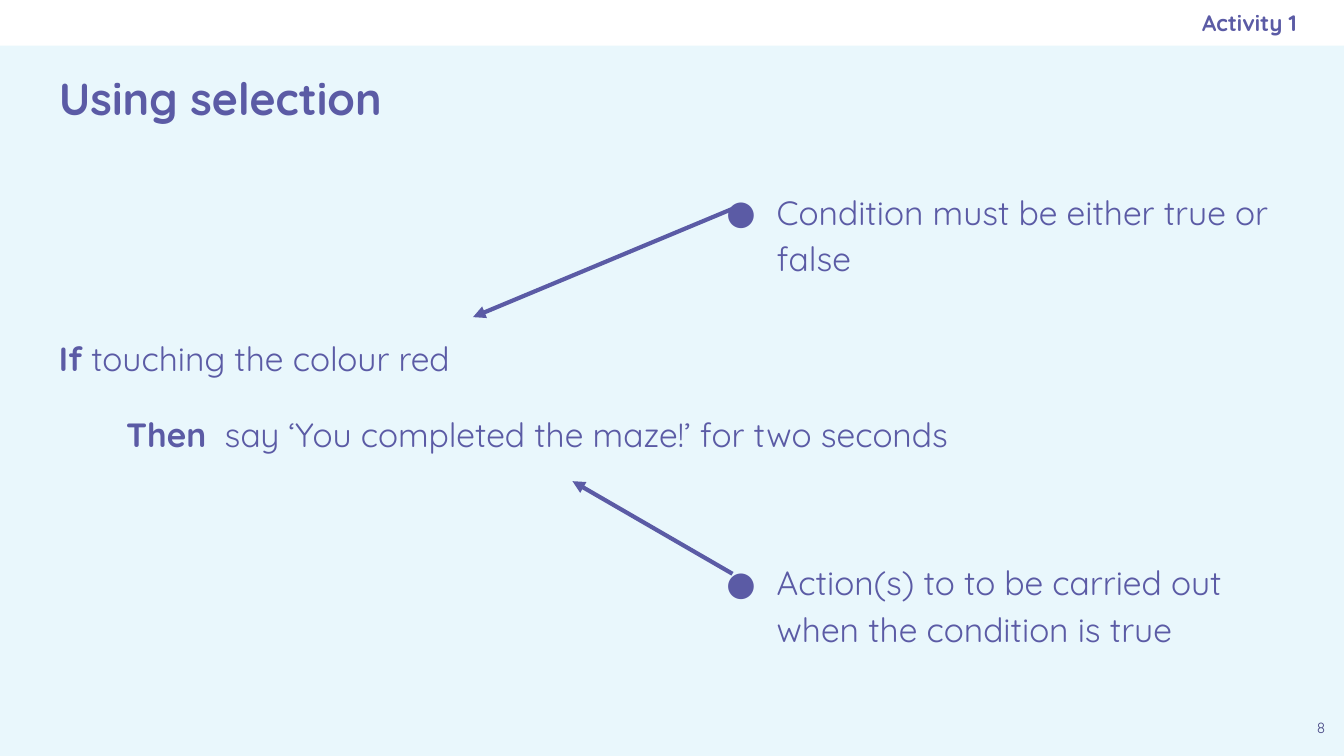
from lxml import etree
from pptx import Presentation
from pptx import util as u
from pptx.dml.color import RGBColor
from pptx.enum import shapes, text
from pptx.oxml.ns import qn

COLOURS = {"background": "E9F7FC", "band": "FFFFFF", "main": "5B5BA5", "number": "494985"}
FONT = "Quicksand"


def colour(name):
    return RGBColor.from_string(COLOURS[name])


class SlideBuilder:
    def __init__(self, slide):
        self.slide = slide
        fill = slide.background.fill
        fill.solid()
        fill.fore_color.rgb = colour("background")

    def band(self, left, top, width, height):
        shape = self.slide.shapes.add_shape(
            shapes.MSO_SHAPE.RECTANGLE, *map(u.Pt, (left, top, width, height)))
        shape.shadow.inherit = False
        shape.fill.solid()
        shape.fill.fore_color.rgb = colour("band")
        shape.line.fill.background()

    def text_box(self, left, top, width, height, middle=False, right_inset=7.2):
        shape = self.slide.shapes.add_textbox(*map(u.Pt, (left, top, width, height)))
        frame = shape.text_frame
        frame.word_wrap = True
        frame.margin_left = frame.margin_top = frame.margin_bottom = u.Pt(7.2)
        frame.margin_right = u.Pt(right_inset)
        frame.vertical_anchor = text.MSO_ANCHOR.MIDDLE if middle else text.MSO_ANCHOR.TOP
        return frame

    def paragraph(self, frame, runs, size=18, bold=None, tone="main", align="LEFT",
                  spacing=None, before=None, indent=0, bullet=False):
        first = frame.paragraphs[0]
        paragraph = frame.add_paragraph() if first.runs else first
        paragraph.alignment = getattr(text.PP_ALIGN, align)
        paragraph.line_spacing = spacing
        if before:
            paragraph.space_before = u.Pt(before)
        properties = paragraph._p.get_or_add_pPr()
        if indent:
            properties.set("marL", str(u.Pt(indent)))
            properties.set("indent", str(u.Pt(-27) if bullet else 0))
        if bullet:
            bullet_colour = etree.SubElement(properties, qn("a:buClr"))
            etree.SubElement(bullet_colour, qn("a:srgbClr"), val=COLOURS[tone])
            etree.SubElement(properties, qn("a:buFont"), typeface=FONT)
            etree.SubElement(properties, qn("a:buChar"), char="●")
        font = paragraph.font
        font.name, font.size, font.bold = FONT, u.Pt(size), bold
        font.color.rgb = colour(tone)
        for words, run_bold in runs:
            run = paragraph.add_run()
            run.text = words
            if run_bold:
                run.font.bold = True

    def arrow(self, start, end):
        connector = self.slide.shapes.add_connector(
            shapes.MSO_CONNECTOR.STRAIGHT, *map(u.Pt, start + end))
        connector.line.width = u.Pt(2.25)
        connector.line.color.rgb = colour("main")
        etree.SubElement(connector.line._get_or_add_ln(), qn("a:tailEnd"), type="triangle")
        etree.SubElement(connector._element.spPr, qn("a:effectLst"))


def main():
    presentation = Presentation()
    presentation.slide_width, presentation.slide_height = u.Pt(720), u.Pt(405)
    builder = SlideBuilder(presentation.slides.add_slide(presentation.slide_layouts[6]))

    builder.band(0, 0, 720, 24.5)
    number = builder.text_box(695.5, 380.2, 24.5, 24.5)
    builder.paragraph(number, [("8", False)], size=8, tone="number", align="CENTER")
    activity = builder.text_box(414, 0, 280.8, 24.5, middle=True, right_inset=0)
    builder.paragraph(activity, [("Activity 1", False)], size=12, bold=True, align="RIGHT")
    title = builder.text_box(24.5, 25.2, 671, 54.7, middle=True)
    builder.paragraph(title, [("Using selection", False)], size=24, bold=True)

    statement = builder.text_box(24.5, 170.4, 501.8, 209.8)
    builder.paragraph(statement, [("If", True), (" touching the colour red", False)], spacing=1.15)
    builder.paragraph(
        statement, [("Then", True), ("  say ‘You completed the maze!’ for two seconds", False)],
        spacing=1.15, before=16, indent=36)

    notes = builder.text_box(373, 92.2, 322.5, 288)
    for words, before in (("Condition must be either true or false", None),
                          ("Action(s) to to be carried out when the condition is true", 149)):
        builder.paragraph(notes, [(words, False)], spacing=1.15, before=before,
                          indent=36, bullet=True)

    builder.arrow((392.4, 307.4), (306.7, 257.8))
    builder.arrow((393.1, 111.6), (253.4, 169.9))
    presentation.save("out.pptx")


if __name__ == "__main__":
    main()
